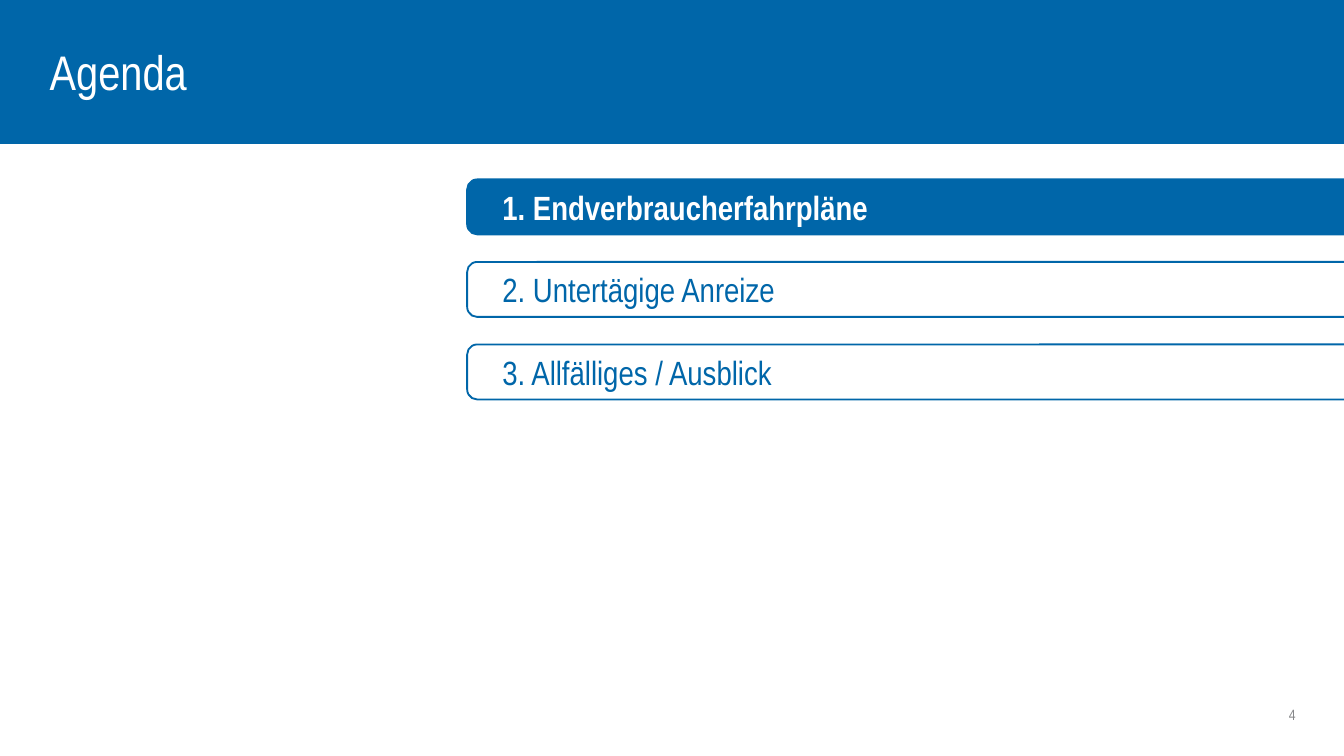
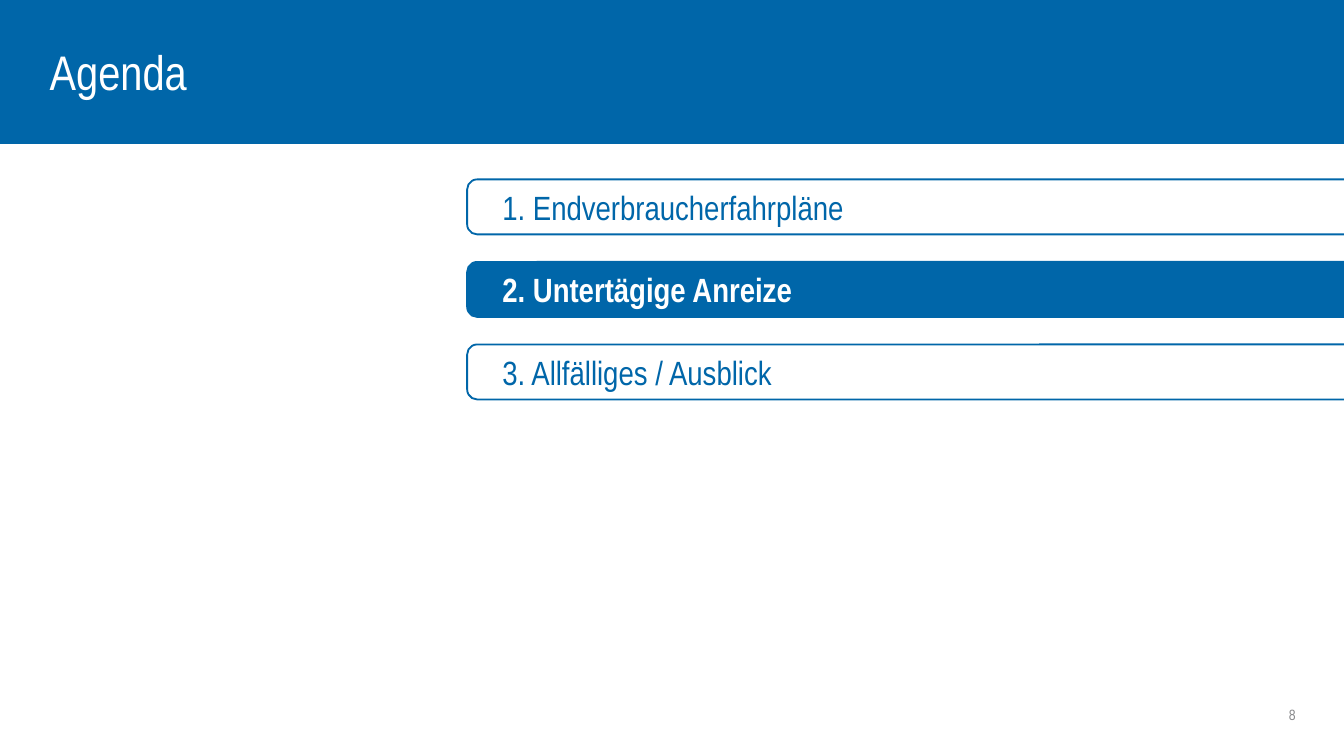
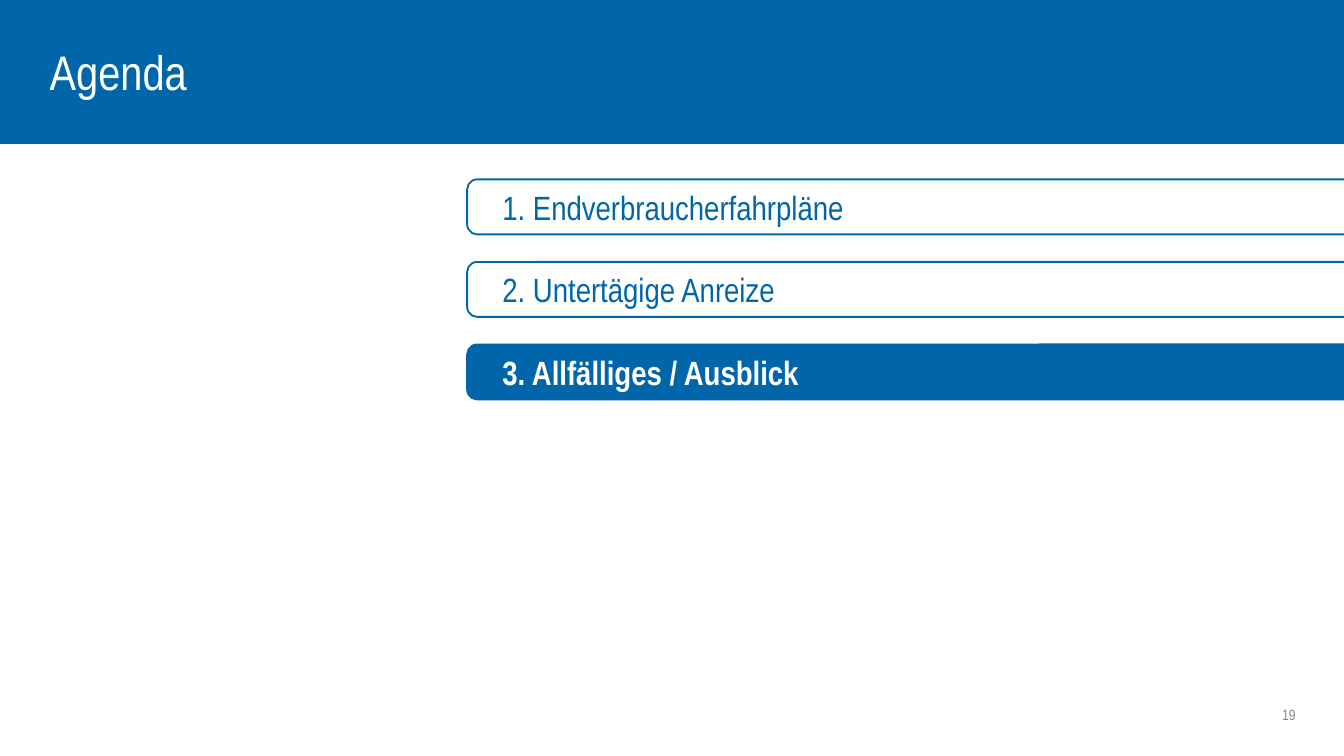
from dataclasses import dataclass

from pptx import Presentation
from pptx.dml.color import RGBColor
from pptx.enum import shapes, text
from pptx.slide import Slide
from pptx.text.text import TextFrame
from pptx.util import Cm, Pt

BLUE = RGBColor(0x00, 0x66, 0xA9)
WHITE = RGBColor(0xFF, 0xFF, 0xFF)
GREY = RGBColor(0x87, 0x88, 0x8A)
FONT = "Arial Narrow"

SLIDE_W, SLIDE_H = Cm(25.4), Cm(14.29)
BAND_H = Cm(2.7)

TOPICS = ("1. Endverbraucherfahrpläne", "2. Untertägige Anreize", "3. Allfälliges / Ausblick")
TAB_LEFT, TAB_LENGTH, TAB_THICKNESS = Cm(8.83), Cm(16.61), Cm(1.04)
FIRST_TAB_CENTER, TAB_PITCH = Cm(3.91), Cm(1.56)


@dataclass(frozen=True)
class AgendaSlide:
    page: int
    active: int


AGENDAS = (AgendaSlide(4, 0), AgendaSlide(8, 1), AgendaSlide(19, 2))


def write(tf: TextFrame, words: str, size: int, color: RGBColor,
          bold: bool = False, align: text.PP_ALIGN = text.PP_ALIGN.LEFT,
          top: float = 0, bottom: float = 0) -> None:
    """Set one vertically centred line, with top and bottom insets in cm."""
    tf.text = words
    tf.word_wrap = True
    tf.auto_size = text.MSO_AUTO_SIZE.NONE
    tf.vertical_anchor = text.MSO_ANCHOR.MIDDLE
    tf.margin_left = tf.margin_right = 0
    tf.margin_top, tf.margin_bottom = Cm(top), Cm(bottom)
    p = tf.paragraphs[0]
    p.alignment = align
    font = p.runs[0].font
    font.name, font.size, font.bold = FONT, Pt(size), bold
    font.color.rgb = color


def add_header(slide: Slide) -> None:
    band = slide.shapes.add_shape(shapes.MSO_SHAPE.RECTANGLE, 0, 0, SLIDE_W, BAND_H)
    band.shadow.inherit = False
    band.fill.solid()
    band.fill.fore_color.rgb = BLUE
    band.line.color.rgb = BLUE
    band.line.width = Pt(1)

    title = slide.shapes.title
    title.left, title.top, title.width, title.height = Cm(0.94), Cm(0.84), Cm(18.44), Cm(1)
    write(title.text_frame, "Agenda", 26, WHITE)
    title.element.addprevious(band.element)  # the band lies behind the title


def add_page_number(slide: Slide, page: int) -> None:
    sp = slide.shapes.add_textbox(Cm(21.49), Cm(13.26), Cm(3), Cm(0.5))
    write(sp.text_frame, str(page), 8, GREY, align=text.PP_ALIGN.RIGHT)


def add_tab(slide: Slide, index: int, active: bool) -> None:
    """Draw a topic as an upright shape turned to lie on its side."""
    center_x = TAB_LEFT + TAB_LENGTH // 2
    center_y = FIRST_TAB_CENTER + index * TAB_PITCH
    sp = slide.shapes.add_shape(
        shapes.MSO_SHAPE.ROUND_2_SAME_RECTANGLE,
        center_x - TAB_THICKNESS // 2, center_y - TAB_LENGTH // 2,
        TAB_THICKNESS, TAB_LENGTH)
    sp.rotation = 270
    sp.adjustments[0], sp.adjustments[1] = 0.18, 0
    sp.shadow.inherit = False
    sp.line.color.rgb = BLUE
    sp.line.width = Pt(1)
    if active:
        sp.fill.solid()
        sp.fill.fore_color.rgb = BLUE
    else:
        sp.fill.background()
    write(sp.text_frame, TOPICS[index], 18, WHITE if active else BLUE, active,
          top=0.61, bottom=0.13)
    sp.text_frame._txBody.bodyPr.set("vert", "vert")


def main() -> None:
    prs = Presentation()
    prs.slide_width, prs.slide_height = SLIDE_W, SLIDE_H
    title_only = prs.slide_layouts[5]
    for agenda in AGENDAS:
        slide = prs.slides.add_slide(title_only)
        add_header(slide)
        add_page_number(slide, agenda.page)
        for index in reversed(range(len(TOPICS))):
            add_tab(slide, index, index == agenda.active)
    prs.save("out.pptx")


if __name__ == "__main__":
    main()
